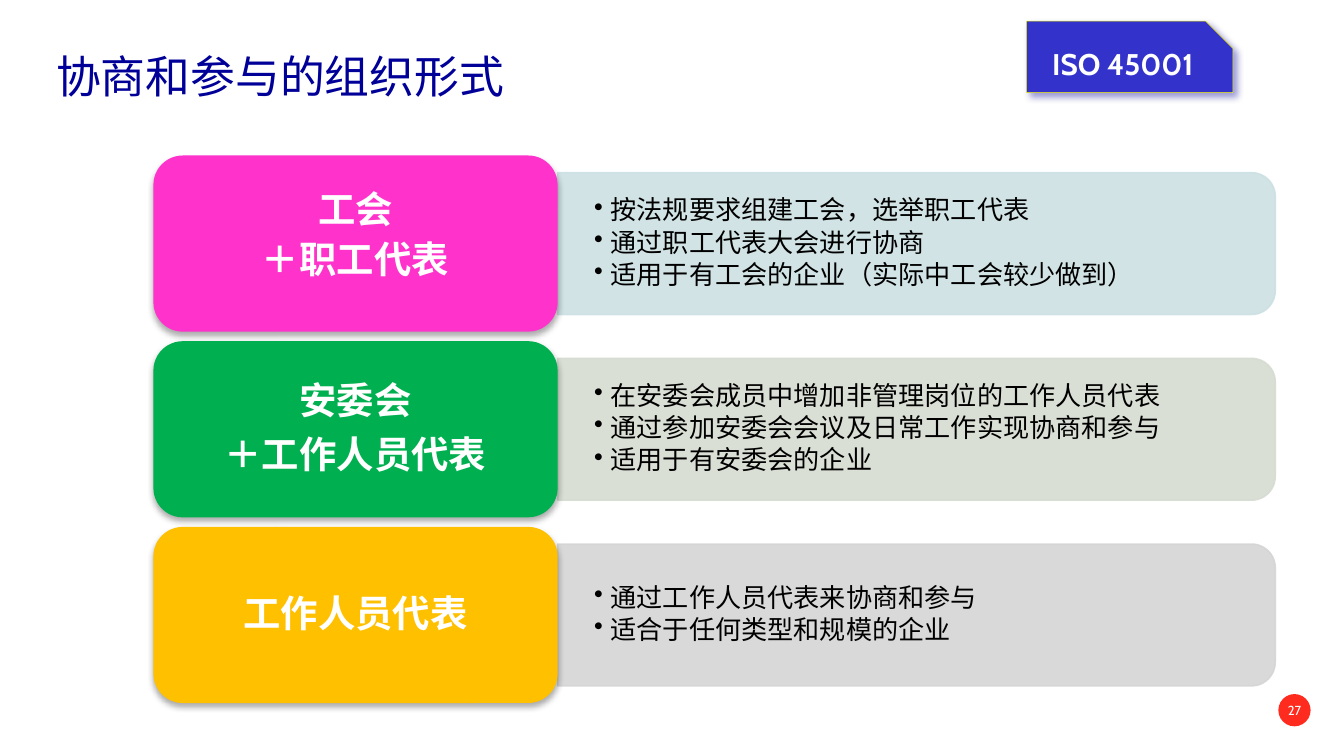
from dataclasses import dataclass

from lxml.etree import SubElement
from pptx import Presentation
from pptx.dml.color import RGBColor
from pptx.enum.shapes import MSO_SHAPE as Shape
from pptx.enum.text import MSO_ANCHOR as Anchor, MSO_AUTO_SIZE as AutoSize, PP_ALIGN as Align
from pptx.oxml.ns import qn
from pptx.util import Cm, Pt


@dataclass(frozen=True)
class Theme:
    cjk: str = "Noto Sans CJK SC"
    latin: str = "Cabin"
    title: str = "000099"
    body: str = "000000"
    light: str = "FFFFFF"
    badge: str = "3333CC"
    badge_line: str = "FFFF00"
    page: str = "FF2B1F"
    title_size: float = 24
    card_size: float = 20
    badge_size: float = 16
    body_size: float = 14
    page_size: float = 7


@dataclass(frozen=True)
class Shadow:
    color: str
    alpha: int
    blur: float
    distance: float
    angle: int


@dataclass(frozen=True)
class Form:
    heading: tuple[str, ...]
    points: tuple[str, ...]
    card: str
    bar: str
    first_spacing: float = 0.9


T = Theme()
CARD_SHADOW = Shadow("000000", 32, 3.5, 2.2, 90)
BADGE_SHADOW = Shadow("000099", 40, 4, 3, 45)

CARD_LEFT, CARD_TOP, CARD_W, CARD_H = 2.9, 2.94, 7.64, 3.33
PITCH = 3.51
BAR_LEFT, BAR_W, BAR_H = CARD_LEFT + CARD_W, 13.56, 2.68
POINTS_W, POINTS_H = 13.44, 2.41

FORMS = (
    Form(("工会", "＋职工代表"),
         ("按法规要求组建工会，选举职工代表", "通过职工代表大会进行协商",
          "适用于有工会的企业（实际中工会较少做到）"),
         "FF33CC", "CCE0E3", first_spacing=0.5),
    Form(("安委会", "＋工作人员代表"),
         ("在安委会成员中增加非管理岗位的工作人员代表",
          "通过参加安委会会议及日常工作实现协商和参与", "适用于有安委会的企业"),
         "00B050", "D6DCD1"),
    Form(("工作人员代表",),
         ("通过工作人员代表来协商和参与", "适合于任何类型和规模的企业"),
         "FFC000", "D5D5D5"),
)


def add_run(p, text: str, font: str, size: float, color: str, bold: bool = False) -> None:
    r = p.add_run()
    r.text = text
    r.font.name = font
    r.font.size = Pt(size)
    r.font.bold = bold
    r.font.color.rgb = RGBColor.from_string(color)
    SubElement(r.font._element, qn("a:ea"), typeface=font)


def set_frame(tf, x: float = 0, y: float = 0, anchor=Anchor.MIDDLE) -> None:
    tf.word_wrap = True
    tf.auto_size = AutoSize.NONE
    tf.vertical_anchor = anchor
    tf.margin_left = tf.margin_right = Cm(x)
    tf.margin_top = tf.margin_bottom = Cm(y)


def paragraph(tf, index: int):
    return tf.add_paragraph() if index else tf.paragraphs[0]


def add_shape(s, kind, left: float, top: float, width: float, height: float, fill: str):
    sp = s.shapes.add_shape(kind, Cm(left), Cm(top), Cm(width), Cm(height))
    sp.shadow.inherit = False
    sp.fill.solid()
    sp.fill.fore_color.rgb = RGBColor.from_string(fill)
    sp.line.fill.background()
    return sp


def set_line(sp, color: str, width: float) -> None:
    sp.line.color.rgb = RGBColor.from_string(color)
    sp.line.width = Pt(width)


def set_shadow(sp, shadow: Shadow) -> None:
    effects = sp._element.spPr.find(qn("a:effectLst"))
    outer = SubElement(effects, qn("a:outerShdw"), blurRad=str(Pt(shadow.blur)),
                       dist=str(Pt(shadow.distance)), dir=str(shadow.angle * 60000),
                       rotWithShape="0")
    color = SubElement(outer, qn("a:srgbClr"), val=shadow.color)
    SubElement(color, qn("a:alpha"), val=str(shadow.alpha * 1000))


def add_label(sp, text: str, size: float, bold: bool = False) -> None:
    set_frame(sp.text_frame)
    p = sp.text_frame.paragraphs[0]
    p.alignment = Align.CENTER
    add_run(p, text, T.latin, size, T.light, bold)


def add_title(s, text: str) -> None:
    sp = s.shapes.title
    sp.left, sp.top, sp.width, sp.height = Cm(0.81), Cm(0.53), Cm(22), Cm(1.42)
    set_frame(sp.text_frame, 0.25, 0.13, Anchor.TOP)
    p = sp.text_frame.paragraphs[0]
    p.alignment = Align.LEFT
    p.line_spacing = 1.25
    add_run(p, text, T.cjk, T.title_size, T.title)


def add_bar(s, form: Form, middle: float) -> None:
    sp = add_shape(s, Shape.ROUND_2_SAME_RECTANGLE, BAR_LEFT + (BAR_W - BAR_H) / 2,
                   middle - BAR_W / 2, BAR_H, BAR_W, form.bar)
    sp.rotation = 90
    set_line(sp, form.bar, 0.85)
    for color in sp._element.spPr.iter(qn("a:srgbClr")):
        SubElement(color, qn("a:alpha"), val="90000")


def add_points(s, form: Form, middle: float) -> None:
    sp = s.shapes.add_textbox(Cm(BAR_LEFT), Cm(middle - POINTS_H / 2),
                              Cm(POINTS_W), Cm(POINTS_H))
    set_frame(sp.text_frame, 0.69, 0.36)
    for i, text in enumerate(form.points):
        p = paragraph(sp.text_frame, i)
        pPr = p._p.get_or_add_pPr()
        pPr.set("marL", str(Cm(0.31)))
        pPr.set("indent", str(-Cm(0.31)))
        SubElement(pPr, qn("a:buChar"), char="•")
        p.line_spacing = 0.9
        p.space_after = Pt(0.15 * T.body_size)
        add_run(p, text, T.cjk, T.body_size, T.body)


def add_card(s, form: Form, top: float) -> None:
    sp = add_shape(s, Shape.ROUNDED_RECTANGLE, CARD_LEFT, top, CARD_W, CARD_H, form.card)
    set_shadow(sp, CARD_SHADOW)
    set_frame(sp.text_frame, 0.2, 0.1)
    for i, text in enumerate(form.heading):
        p = paragraph(sp.text_frame, i)
        p.alignment = Align.CENTER
        p.line_spacing = 0.9 if i else form.first_spacing
        p.space_after = Pt(0.35 * T.card_size)
        add_run(p, text, T.cjk, T.card_size, T.light, True)


def main() -> None:
    prs = Presentation()
    prs.slide_width, prs.slide_height = Cm(25.4), Cm(14.29)
    s = prs.slides.add_slide(prs.slide_layouts[5])
    add_title(s, "协商和参与的组织形式")

    for i, form in enumerate(FORMS):
        top = CARD_TOP + i * PITCH
        middle = top + CARD_H / 2
        add_bar(s, form, middle)
        add_points(s, form, middle)
        add_card(s, form, top)

    badge = add_shape(s, Shape.SNIP_1_RECTANGLE, 19.4, 0.4, 3.9, 1.35, T.badge)
    badge.adjustments[0] = 0.38
    set_line(badge, T.badge_line, 0.25)
    set_shadow(badge, BADGE_SHADOW)
    add_label(badge, "ISO 45001", T.badge_size, True)

    page = add_shape(s, Shape.OVAL, 24.16, 13.12, 0.61, 0.61, T.page)
    add_label(page, "27", T.page_size)
    page.text_frame.word_wrap = False

    prs.save("out.pptx")


if __name__ == "__main__":
    main()
